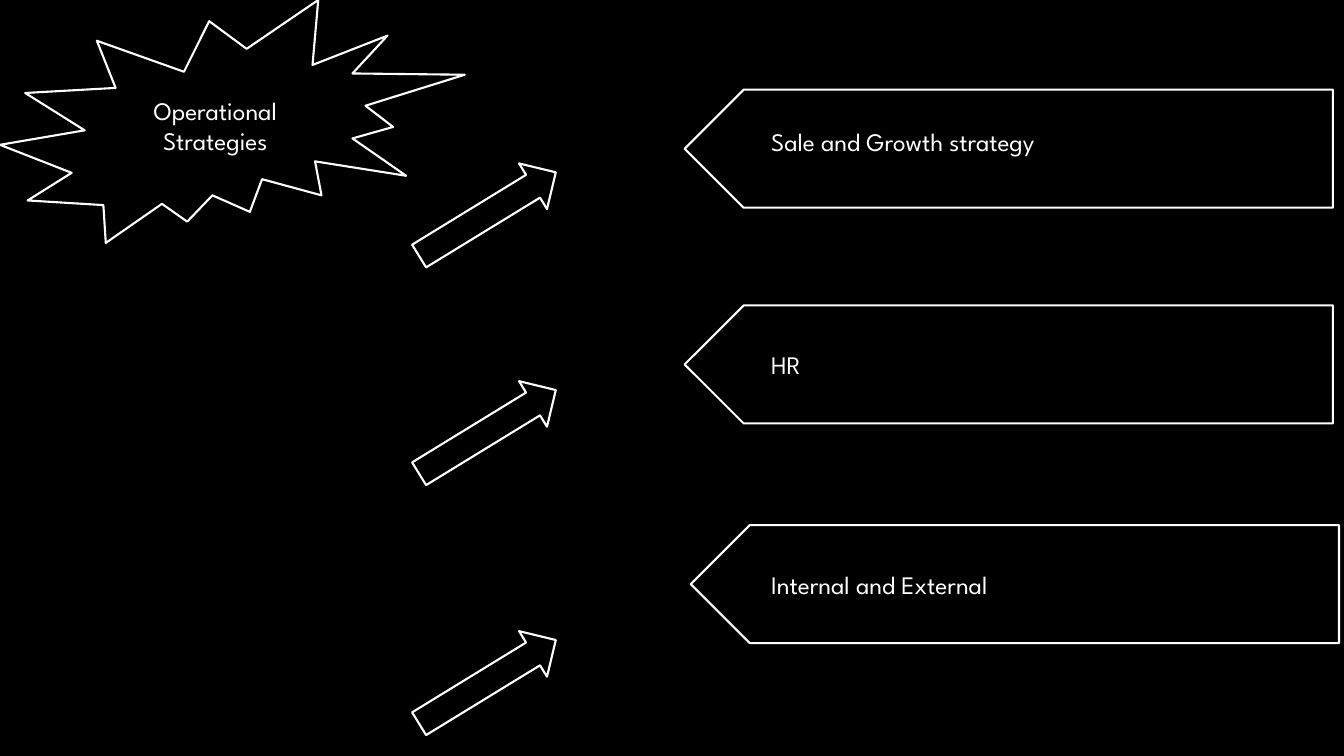
from pptx import Presentation
from pptx import util as u
from pptx.dml.color import RGBColor
from pptx.enum import shapes, text

COLORS = {"background": "000000", "ink": "FFFFFF"}
FONT = {"name": "League Spartan", "size": u.Pt(18)}
BANNER_SIZE = (6.43, 1.17)
ARROW_SIZE = (1.59, 0.53)
# label, label top, label width, banner left, banner top, arrow top
STRATEGIES = [
    ("Sale and Growth strategy", 1.2, 3.75, 6.79, 0.89, 1.86),
    ("HR", 3.42, 2.83, 6.79, 3.03, 4.02),
    ("Internal and External", 5.6, 2.83, 6.85, 5.21, 6.5),
]


def color(name):
    return RGBColor.from_string(COLORS[name])


def write(frame, wording, align):
    frame.word_wrap = True
    paragraph = frame.paragraphs[0]
    paragraph.alignment = align
    run = paragraph.add_run()
    run.text = wording
    for attribute, value in FONT.items():
        setattr(run.font, attribute, value)
    run.font.color.rgb = color("ink")


def add_outline(slide, kind, box, rotation=0):
    """Add an unfilled preset shape with a white line."""
    outline = slide.shapes.add_shape(kind, *map(u.Inches, box))
    outline.rotation = rotation
    outline.shadow.inherit = False
    outline.fill.background()
    outline.line.color.rgb = color("ink")
    outline.line.width = u.Pt(1.5)
    return outline


def add_burst(slide, box):
    burst = add_outline(slide, shapes.MSO_SHAPE.EXPLOSION2, box)
    burst.text_frame.vertical_anchor = text.MSO_ANCHOR.MIDDLE
    write(burst.text_frame, "Operational Strategies", text.PP_ALIGN.CENTER)


def add_banner(slide, box):
    add_outline(slide, shapes.MSO_SHAPE.PENTAGON, box, 180)


def add_label(slide, wording, box):
    label = slide.shapes.add_textbox(*map(u.Inches, box))
    write(label.text_frame, wording, text.PP_ALIGN.LEFT)
    label.text_frame.auto_size = text.MSO_AUTO_SIZE.SHAPE_TO_FIT_TEXT


def add_arrow(slide, box):
    add_outline(slide, shapes.MSO_SHAPE.RIGHT_ARROW, box, 328.5)


def main():
    deck = Presentation()
    deck.slide_width, deck.slide_height = u.Inches(13.33), u.Inches(7.5)
    slide = deck.slides.add_slide(deck.slide_layouts.get_by_name("Blank"))
    slide.background.fill.solid()
    slide.background.fill.fore_color.rgb = color("background")

    add_burst(slide, (0, 0, 4.61, 2.41))
    for label, label_top, label_width, banner_left, banner_top, arrow_top in STRATEGIES:
        add_banner(slide, (banner_left, banner_top, *BANNER_SIZE))
        add_label(slide, label, (7.55, label_top, label_width, 0.4))
        add_arrow(slide, (4.04, arrow_top, *ARROW_SIZE))
    deck.save("out.pptx")


if __name__ == "__main__":
    main()
